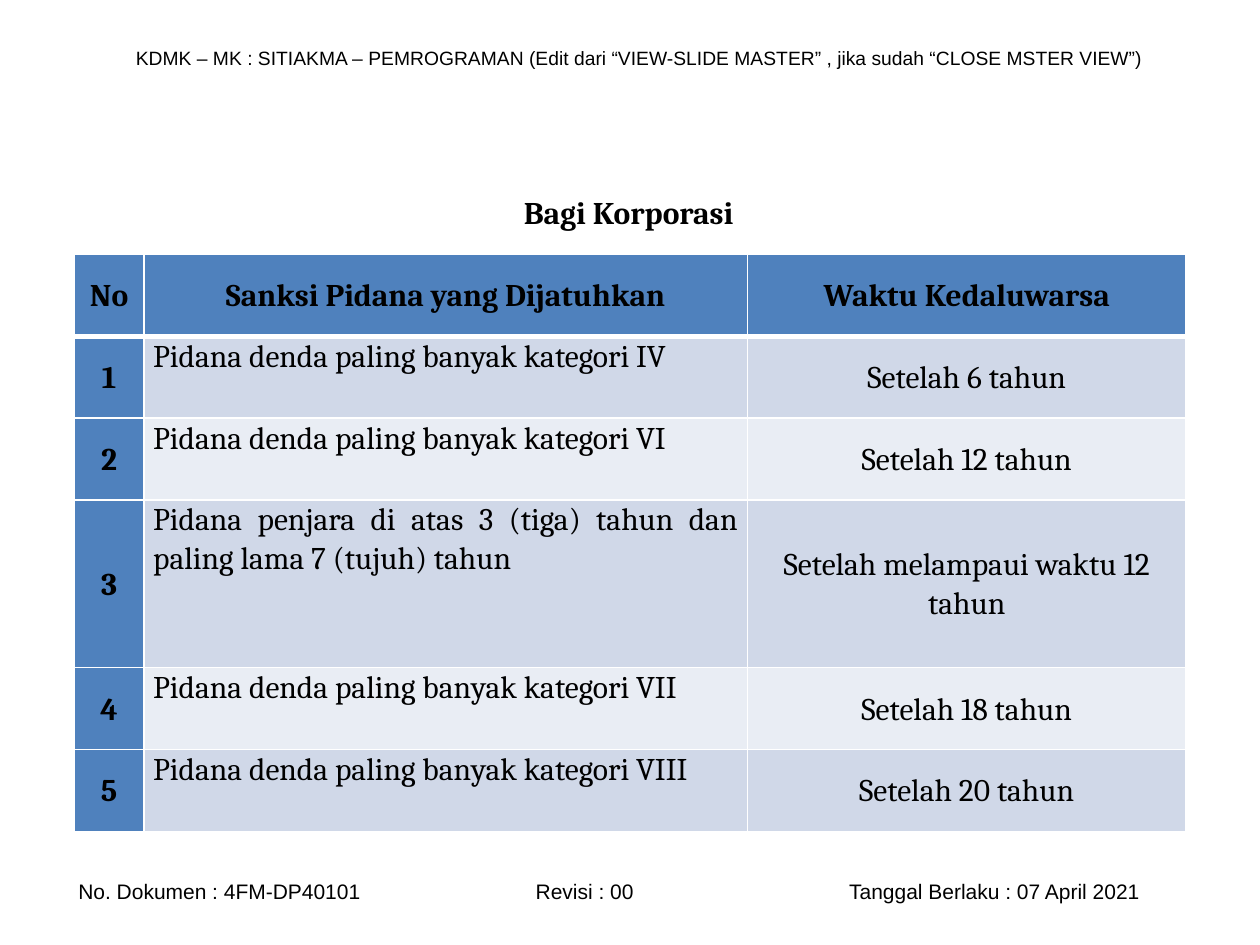
from dataclasses import dataclass

from lxml import etree
from pptx import Presentation
from pptx import util as u
from pptx.dml.color import RGBColor
from pptx.enum import text
from pptx.oxml import ns

BLACK = RGBColor(0x00, 0x00, 0x00)
WHITE = RGBColor(0xFF, 0xFF, 0xFF)
BLUE = RGBColor(0x4F, 0x81, 0xBD)
DARK = RGBColor(0xD0, 0xD8, 0xE8)
LIGHT = RGBColor(0xE9, 0xED, 0xF4)
ALIGN = text.PP_ALIGN
ANCHOR = text.MSO_ANCHOR


@dataclass
class Label:
    words: str
    left: float
    top: float
    width: float
    height: float
    size: int
    font: str = "Arial"
    bold: bool = False
    align: ALIGN = ALIGN.LEFT
    anchor: ANCHOR = ANCHOR.MIDDLE
    inset: float = 0.25
    tabs: tuple[float, ...] = ()


@dataclass
class Row:
    number: str
    penalty: str
    expiry: str
    height: float = 1.65


LABELS = [
    Label("KDMK – MK : SITIAKMA – PEMROGRAMAN (Edit dari “VIEW-SLIDE MASTER” , "
          "jika sudah “CLOSE MSTER VIEW”)", 2.49, 0.79, 21.21, 0.74, 11, align=ALIGN.JUSTIFY),
    Label("No. Dokumen : 4FM-DP40101\tRevisi : 00\tTanggal Berlaku : 07 April 2021",
          0.51, 17.58, 24, 0.76, 12, inset=1.07, tabs=(9.22, 15.54)),
    Label("Bagi Korporasi", 10.31, 3.76, 7.39, 1.02, 18, "Cambria", True, anchor=ANCHOR.TOP),
]
WIDTHS = [1.4, 12.17, 8.84]
ROWS = [
    Row("No", "Sanksi Pidana yang Dijatuhkan", "Waktu Kedaluwarsa"),
    Row("1", "Pidana denda paling banyak kategori IV", "Setelah 6 tahun"),
    Row("2", "Pidana denda paling banyak kategori VI", "Setelah 12 tahun"),
    Row("3", "Pidana penjara di atas 3 (tiga) tahun dan paling lama 7 (tujuh) tahun",
        "Setelah melampaui waktu 12 tahun", 3.38),
    Row("4", "Pidana denda paling banyak kategori VII", "Setelah 18 tahun"),
    Row("5", "Pidana denda paling banyak kategori VIII", "Setelah 20 tahun"),
]


def add_run(para, words: str, font: str, size: int, bold: bool) -> None:
    run = para.add_run()
    run.text = words
    run.font.name = font
    run.font.size = u.Pt(size)
    run.font.bold = bold
    run.font.color.rgb = BLACK


def add_tabs(para, stops: tuple[float, ...]) -> None:
    group = etree.SubElement(para._p.get_or_add_pPr(), ns.qn("a:tabLst"))
    for stop in stops:
        etree.SubElement(group, ns.qn("a:tab"), pos=str(u.Cm(stop)), algn="l")


def add_label(slide, label: Label) -> None:
    box = slide.shapes.add_textbox(
        u.Cm(label.left), u.Cm(label.top), u.Cm(label.width), u.Cm(label.height))
    frame = box.text_frame
    frame.word_wrap = True
    frame.vertical_anchor = label.anchor
    frame.margin_left = u.Cm(label.inset)
    para = frame.paragraphs[0]
    para.alignment = label.align
    if label.tabs:
        add_tabs(para, label.tabs)
    add_run(para, label.words, label.font, label.size, label.bold)


def add_edge(cell, side: str, points: int) -> None:
    line = etree.SubElement(cell._tc.get_or_add_tcPr(), ns.qn(f"a:{side}"), w=str(u.Pt(points)))
    fill = etree.SubElement(line, ns.qn("a:solidFill"))
    etree.SubElement(fill, ns.qn("a:srgbClr"), val=str(WHITE))


def fill_cell(cell, words: str, row: int, col: int) -> None:
    head = row == 0
    strong = head or col == 0
    prose = col == 1 and not head
    add_edge(cell, "lnL", 1)
    add_edge(cell, "lnR", 1)
    add_edge(cell, "lnT", 3 if row == 1 else 1)
    add_edge(cell, "lnB", 3 if head else 1)
    cell.fill.solid()
    cell.fill.fore_color.rgb = BLUE if strong else DARK if row % 2 else LIGHT
    cell.margin_left = cell.margin_right = u.Cm(0.19)
    cell.margin_top = cell.margin_bottom = u.Cm(0)
    cell.vertical_anchor = ANCHOR.TOP if prose else ANCHOR.MIDDLE
    para = cell.text_frame.paragraphs[0]
    para.alignment = ALIGN.JUSTIFY if prose else ALIGN.CENTER
    para.line_spacing = 1.07
    para.space_after = u.Pt(8)
    add_run(para, words, "Cambria", 18, strong)


def add_grid(slide, rows: list[Row], widths: list[float]) -> None:
    height = sum(row.height for row in rows)
    table = slide.shapes.add_table(
        len(rows), len(widths), u.Cm(1.5), u.Cm(5.13), u.Cm(sum(widths)), u.Cm(height)).table
    for col, width in enumerate(widths):
        table.columns[col].width = u.Cm(width)
    for i, row in enumerate(rows):
        table.rows[i].height = u.Cm(row.height)
        for col, words in enumerate((row.number, row.penalty, row.expiry)):
            fill_cell(table.cell(i, col), words, i, col)


def main() -> None:
    deck = Presentation()
    deck.slide_width, deck.slide_height = u.Cm(25.4), u.Cm(19.05)
    slide = deck.slides.add_slide(deck.slide_layouts[6])
    for label in LABELS:
        add_label(slide, label)
    add_grid(slide, ROWS, WIDTHS)
    deck.save("out.pptx")


if __name__ == "__main__":
    main()
